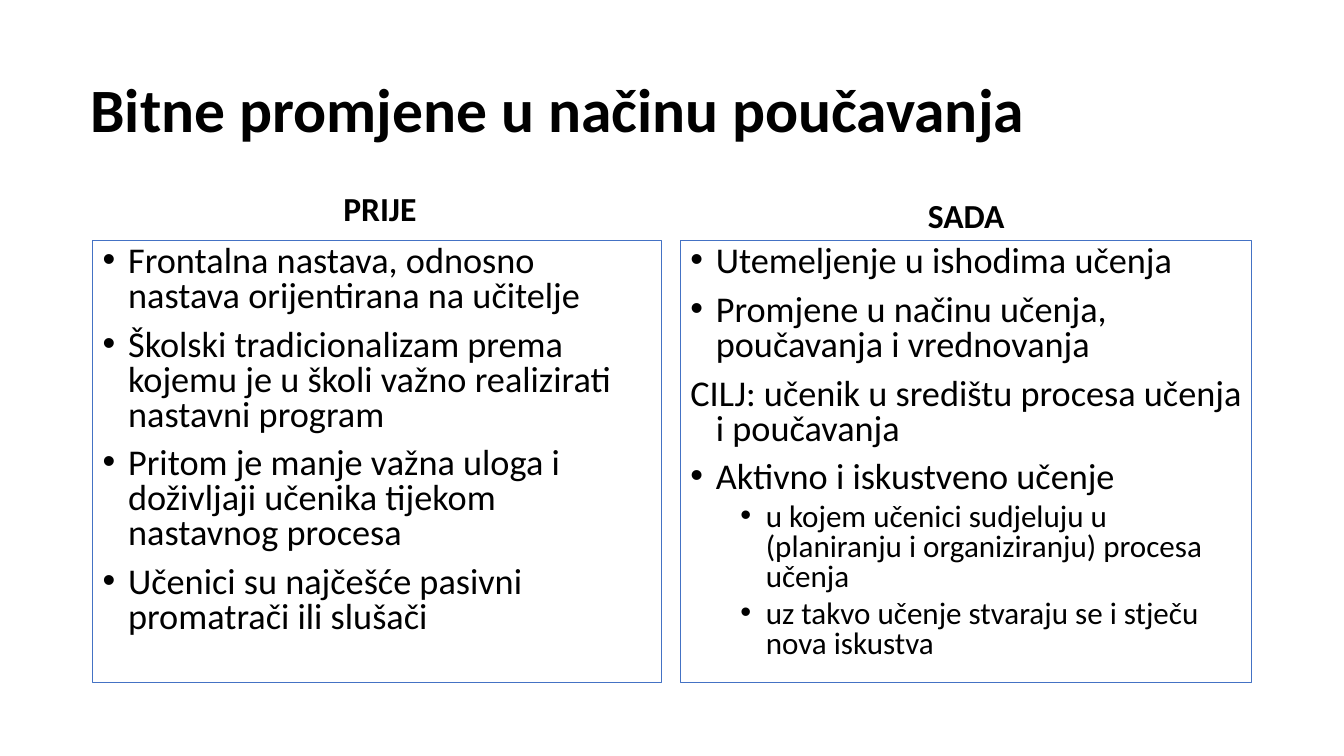
from dataclasses import dataclass

from lxml import etree
from pptx import Presentation
from pptx.dml.color import RGBColor
from pptx.enum.shapes import MSO_SHAPE
from pptx.enum.text import MSO_ANCHOR, PP_ALIGN
from pptx.oxml.ns import qn
from pptx.util import Cm, Pt

RECT = MSO_SHAPE.RECTANGLE
TOP, MIDDLE, BOTTOM = MSO_ANCHOR.TOP, MSO_ANCHOR.MIDDLE, MSO_ANCHOR.BOTTOM
LEFT, CENTER = PP_ALIGN.LEFT, PP_ALIGN.CENTER

# Content: body items are (kind, text)
TITLE = "Bitne promjene u načinu poučavanja"
COLUMNS = [
    {
        "heading": "PRIJE",
        "heading_box": (2.41, 3.99, 14.33, 1.9),
        "body_box": (2.34, 6.07, 14.33, 11.13),
        "items": [
            ("bullet", "Frontalna nastava, odnosno nastava orijentirana na učitelje"),
            ("bullet", "Školski tradicionalizam prema kojemu je u školi važno "
                       "realizirati nastavni program"),
            ("bullet", "Pritom je manje važna uloga i doživljaji učenika tijekom "
                       "nastavnog procesa"),
            ("bullet", "Učenici su najčešće pasivni promatrači ili slušači"),
        ],
    },
    {
        "heading": "SADA",
        "heading_box": (17.15, 4.67, 14.4, 1.4),
        "body_box": (17.15, 6.07, 14.4, 11.13),
        "items": [
            ("bullet", "Utemeljenje u ishodima učenja"),
            ("bullet", "Promjene u načinu učenja, poučavanja i vrednovanja"),
            ("plain", "CILJ: učenik u središtu procesa učenja i poučavanja"),
            ("bullet", "Aktivno i iskustveno učenje"),
            ("sub", "u kojem učenici sudjeluju u (planiranju i organiziranju) "
                    "procesa učenja"),
            ("sub", "uz takvo učenje stvaraju se i stječu nova iskustva"),
        ],
    },
]
TITLE_BOX = (2.03, 0.99, 28.5, 3.68)


@dataclass(frozen=True)
class Theme:
    font: str = "Calibri"
    text: RGBColor = RGBColor(0, 0, 0)
    border: RGBColor = RGBColor(0x44, 0x72, 0xC4)
    title: float = 44
    heading: float = 24
    body: float = 25.9
    sub: float = 22.2


THEME = Theme()


def style(p, size, bold=False, align=LEFT, spacing=0.9, before=0):
    p.alignment, p.line_spacing, p.space_before = align, spacing, Pt(before)
    for r in p.runs:
        r.font.name, r.font.size, r.font.bold = THEME.font, Pt(size), bold
        r.font.color.rgb = THEME.text


def set_bullet(p, kind):
    pPr = p._p.get_or_add_pPr()
    pPr.set("marL", str(Cm(1.9 if kind == "sub" else 0.64)))
    pPr.set("indent", str(-Cm(0.64)))
    if kind == "plain":
        etree.SubElement(pPr, qn("a:buNone"))
    else:
        etree.SubElement(pPr, qn("a:buFont")).set("typeface", "Arial")
        etree.SubElement(pPr, qn("a:buChar")).set("char", "•")


def add_line(s, box, text, size, anchor, **fmt):
    tf = s.shapes.add_textbox(*map(Cm, box)).text_frame
    tf.word_wrap, tf.vertical_anchor = True, anchor
    tf.text = text
    style(tf.paragraphs[0], size, bold=True, **fmt)


def add_body(s, box, items):
    sp = s.shapes.add_shape(RECT, *map(Cm, box))
    sp.shadow.inherit = False
    sp.fill.background()
    sp.line.color.rgb, sp.line.width = THEME.border, Pt(0.75)
    tf = sp.text_frame
    tf.word_wrap, tf.vertical_anchor = True, TOP
    tf.text = "\n".join(text for _, text in items)
    for p, (kind, _) in zip(tf.paragraphs, items):
        sub = kind == "sub"
        p.level = int(sub)
        style(p, THEME.sub if sub else THEME.body, spacing=0.8,
              before=5 if sub else 10)
        set_bullet(p, kind)


def main():
    prs = Presentation()
    prs.slide_width, prs.slide_height = Cm(33.87), Cm(19.05)
    s = prs.slides.add_slide(prs.slide_layouts[6])

    # Title
    add_line(s, TITLE_BOX, TITLE, THEME.title, MIDDLE)

    # Before and now columns
    for col in COLUMNS:
        add_line(s, col["heading_box"], col["heading"], THEME.heading, BOTTOM,
                 align=CENTER, before=10)
        add_body(s, col["body_box"], col["items"])

    prs.save("out.pptx")


if __name__ == "__main__":
    main()
